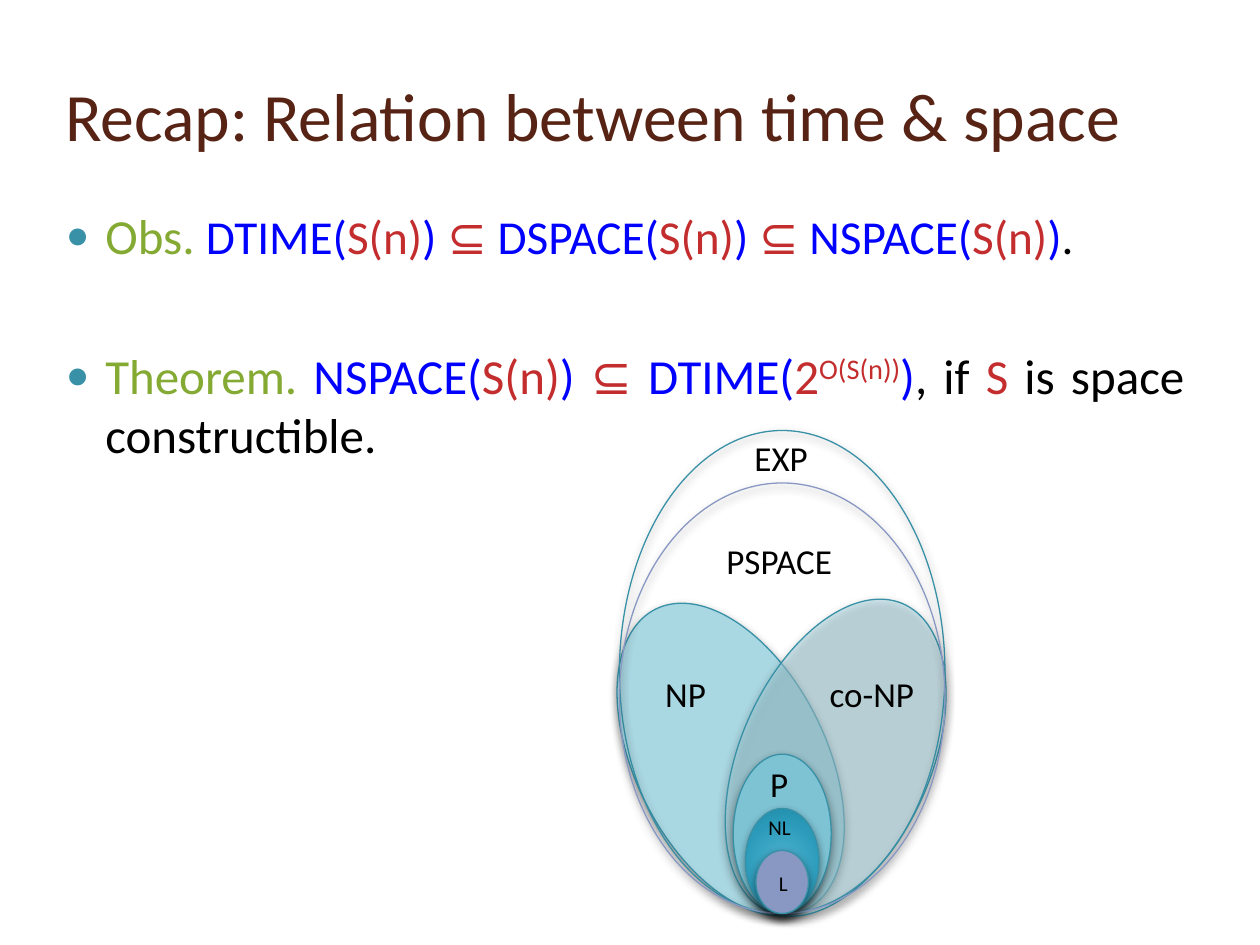
from lxml.etree import SubElement
from pptx import Presentation
from pptx.dml.color import RGBColor
from pptx.enum.shapes import MSO_SHAPE
from pptx.enum.text import MSO_ANCHOR, MSO_AUTO_SIZE, PP_ALIGN
from pptx.oxml.ns import qn
from pptx.util import Pt

BROWN = RGBColor(0x57, 0x23, 0x14)
GREEN = RGBColor(0x84, 0xAA, 0x33)
BLUE = RGBColor(0x00, 0x00, 0xFF)
RED = RGBColor(0xC3, 0x2D, 0x2E)
BLACK = RGBColor(0x00, 0x00, 0x00)
TEAL = RGBColor(0x38, 0x91, 0xA7)
PALE_TEAL = RGBColor(0xA9, 0xD7, 0xE2)
MID_TEAL = RGBColor(0x7E, 0xC3, 0xD4)
LAVENDER = RGBColor(0x88, 0x98, 0xC3)
NL_STOPS = [(0, RGBColor(0x45, 0xAC, 0xCC)), (15, RGBColor(0x45, 0xAC, 0xCB)),
            (62, RGBColor(0x2B, 0x9A, 0xB9)), (97, RGBColor(0x1C, 0x8A, 0xA7)),
            (100, RGBColor(0x0E, 0x89, 0xA7))]

FONT = "Calibri"
SUBSET = [(" ", BLUE), ("⊆ ", RED)]


def set_all(target, values):
    for name, value in values.items():
        setattr(target, name, value)


def place(part, left, top, width, height):
    set_all(part, {"left": Pt(left), "top": Pt(top),
                   "width": Pt(width), "height": Pt(height)})


def add_run(paragraph, text, size, color):
    run = paragraph.add_run()
    run.text = text
    set_all(run.font, {"name": FONT, "size": Pt(size)})
    run.font.color.rgb = color
    return run


def complexity(name, bound="S(n)"):
    return [(f"{name}(", BLUE), (bound, RED), (")", BLUE)]


def fill_title(title, box):
    place(title, *box)
    title.text_frame.vertical_anchor = MSO_ANCHOR.MIDDLE
    title.text_frame.auto_size = MSO_AUTO_SIZE.NONE
    heading = title.text_frame.paragraphs[0]
    heading.alignment = PP_ALIGN.LEFT
    add_run(heading, "Recap: Relation between time & space", 38.7, BROWN)


def add_bullet(paragraph):
    properties = paragraph._p.get_or_add_pPr()
    properties.set("marL", str(Pt(29)))
    properties.set("indent", str(-Pt(22.5)))
    color = SubElement(properties, qn("a:buClr"))
    SubElement(color, qn("a:srgbClr"), val=str(TEAL))
    SubElement(properties, qn("a:buSzPct"), val="80000")
    SubElement(properties, qn("a:buChar"), char="●")


def fill_statements(body, box):
    place(body, *box)
    frame = body.text_frame
    frame.auto_size = MSO_AUTO_SIZE.NONE
    observation = [*complexity("DTIME"), *SUBSET, *complexity("DSPACE"),
                   *SUBSET, *complexity("NSPACE"), (".", BLACK)]
    theorem = [*complexity("NSPACE"), *SUBSET, ("DTIME(", BLUE), ("2", RED),
               ("O(S(n))", RED), (")", BLUE), (", if ", BLACK), ("S", RED),
               (" is space constructible.", BLACK)]
    statements = [("Obs. ", observation, 27, 6), ("Theorem. ", theorem, 28, 46)]
    for index, (lead, parts, size, gap) in enumerate(statements):
        statement = frame.add_paragraph() if index else frame.paragraphs[0]
        set_all(statement, {"alignment": PP_ALIGN.JUSTIFY, "space_before": Pt(gap)})
        add_bullet(statement)
        add_run(statement, lead, 28, GREEN)
        for text, color in parts:
            run = add_run(statement, text, size, color)
            if text == "O(S(n))":
                run.font._element.set("baseline", "30000")  # superscript


def add_shadow(shape):
    shape.shadow.inherit = False
    effects = shape._element.spPr.find(qn("a:effectLst"))
    shadow = SubElement(effects, qn("a:outerShdw"), blurRad=str(Pt(5)),
                        dist=str(Pt(2)), dir="5400000", rotWithShape="0")
    color = SubElement(shadow, qn("a:srgbClr"), val=str(BLACK))
    SubElement(color, qn("a:alpha"), val="43000")


def fill_radial(shape, stops):
    shape.fill.background()
    empty_fill = shape._element.spPr.find(qn("a:noFill"))
    gradient = empty_fill.makeelement(qn("a:gradFill"), {"rotWithShape": "1"})
    stop_list = SubElement(gradient, qn("a:gsLst"))
    for position, color in stops:
        stop = SubElement(stop_list, qn("a:gs"), pos=str(position * 1000))
        SubElement(stop, qn("a:srgbClr"), val=str(color))
    circle = SubElement(gradient, qn("a:path"), {"path": "circle"})
    SubElement(circle, qn("a:fillToRect"), dict.fromkeys("ltrb", "50000"))
    empty_fill.getparent().replace(empty_fill, gradient)


def add_class(slide, box, fill=None, line=TEAL, rotation=0, alpha=None):
    ellipse = slide.shapes.add_shape(MSO_SHAPE.OVAL, *map(Pt, box))
    ellipse.rotation = rotation
    if fill is None:
        ellipse.fill.background()
    elif isinstance(fill, list):
        fill_radial(ellipse, fill)
    else:
        ellipse.fill.solid()
        ellipse.fill.fore_color.rgb = fill
    if alpha:
        color = ellipse._element.spPr.find(qn("a:solidFill")).find(qn("a:srgbClr"))
        SubElement(color, qn("a:alpha"), val=str(alpha * 1000))
    ellipse.line.color.rgb = line
    ellipse.line.width = Pt(0.75)
    add_shadow(ellipse)


def add_label(slide, text, left, top, width, size=20):
    label = slide.shapes.add_textbox(Pt(left), Pt(top), Pt(width), Pt(size + 11))
    label.text_frame.word_wrap = True
    add_run(label.text_frame.paragraphs[0], text, size, BLACK)


def draw_classes(slide, box):
    left, top, width, height = box

    def nested(w, h):
        """Ellipse box centred on the diagram and resting on its bottom edge."""
        return left + (width - w) / 2, top + height - h, w, h

    # NP and co-NP tilt away from each other
    add_class(slide, (left + 9, top + 92, 109, 192), PALE_TEAL, rotation=333.5)
    add_class(slide, (left + 69, top + 91, 109, 192), PALE_TEAL,
              rotation=23.7, alpha=50)

    # Nested classes
    add_class(slide, nested(56, 91), MID_TEAL)
    add_class(slide, nested(width, height))
    add_class(slide, nested(width, 246), line=LAVENDER)
    add_class(slide, nested(42, 60), NL_STOPS)
    add_class(slide, nested(30, 36), LAVENDER)

    # Class names: offset in the diagram, width, size
    for text, x, y, label_width, size in [
            ("NP", 19, 135, 43, 20), ("co-NP", 113, 135, 81, 20),
            ("P", 79, 186, 43, 20), ("EXP", 70, 0, 62, 20),
            ("PSPACE", 54, 58.5, 84, 20), ("NL", 78, 216, 30, 12),
            ("L", 84, 248, 18, 12)]:
        add_label(slide, text, left + x, top + y, label_width, size)


def main():
    deck = Presentation()
    set_all(deck, {"slide_width": Pt(720), "slide_height": Pt(540)})
    slide = deck.slides.add_slide(deck.slide_layouts[1])
    fill_title(slide.shapes.title, (30, 24, 636, 83))
    fill_statements(slide.placeholders[1], (24, 114, 660, 396))
    draw_classes(slide, (354, 246, 186, 276))
    deck.save("out.pptx")


if __name__ == "__main__":
    main()
